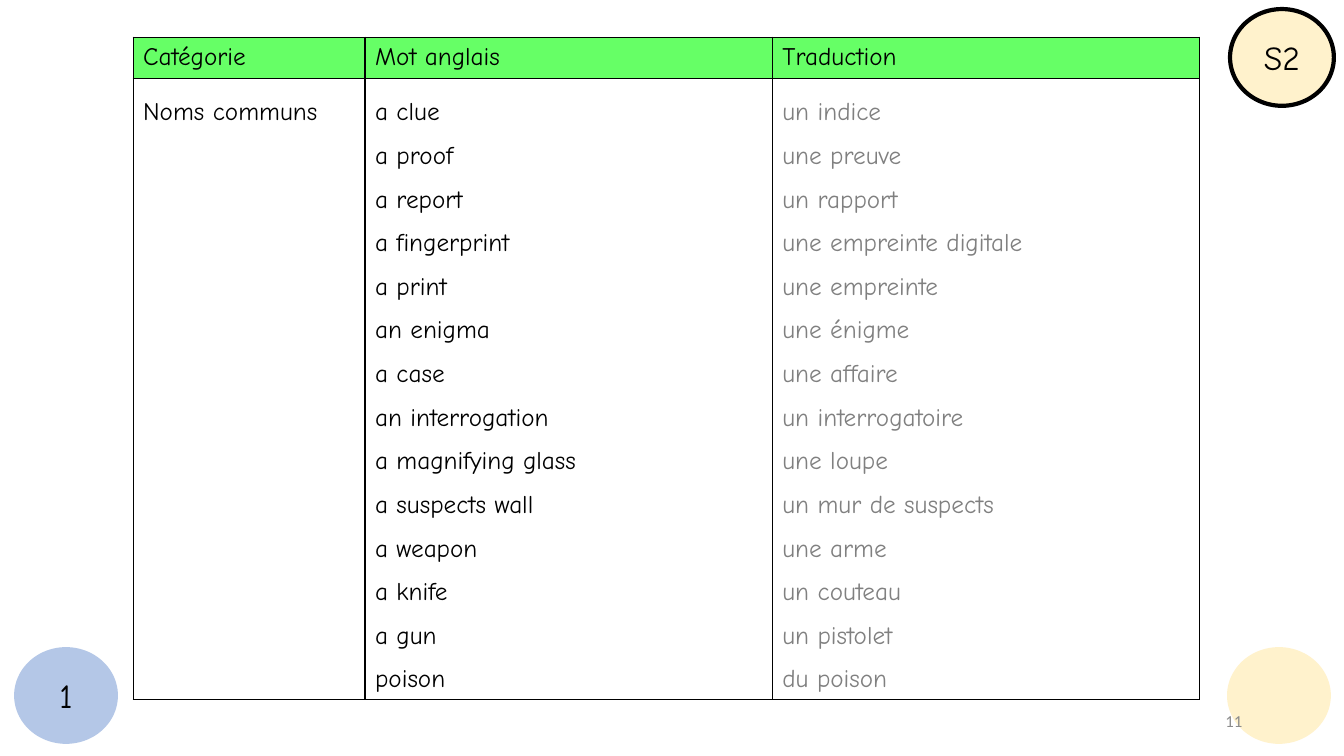
from lxml import etree
from pptx import Presentation
from pptx.dml.color import RGBColor
from pptx.enum.shapes import MSO_SHAPE
from pptx.enum.text import MSO_ANCHOR, PP_ALIGN
from pptx.oxml.ns import qn
from pptx.util import Inches, Pt

OVAL = MSO_SHAPE.OVAL
MIDDLE = MSO_ANCHOR.MIDDLE
CENTER, RIGHT = PP_ALIGN.CENTER, PP_ALIGN.RIGHT

BLACK = RGBColor(0x00, 0x00, 0x00)
GREEN = RGBColor(0x66, 0xFF, 0x66)
GREY = RGBColor(0x80, 0x80, 0x80)
NUMBER_GREY = RGBColor(0x8C, 0x8C, 0x8C)
CREAM = RGBColor(0xFF, 0xF2, 0xCC)
BLUE = RGBColor(0xB4, 0xC7, 0xE7)
FONT = "Comic Neue"

HEADERS = ["Catégorie", "Mot anglais", "Traduction"]
VOCABULARY = [
    ("a clue", "un indice"),
    ("a proof", "une preuve"),
    ("a report", "un rapport"),
    ("a fingerprint", "une empreinte digitale"),
    ("a print", "une empreinte"),
    ("an enigma", "une énigme"),
    ("a case", "une affaire"),
    ("an interrogation", "un interrogatoire"),
    ("a magnifying glass", "une loupe"),
    ("a suspects wall", "un mur de suspects"),
    ("a weapon", "une arme"),
    ("a knife", "un couteau"),
    ("a gun", "un pistolet"),
    ("poison", "du poison"),
]


def add_run(p, text, size, color, font=FONT):
    r = p.add_run()
    r.text = text
    r.font.size = Pt(size)
    r.font.name = font
    r.font.color.rgb = color


def add_borders(cell):
    """Draw a 1 pt black line on each side of the cell, ahead of its fill."""
    tcPr = cell._tc.get_or_add_tcPr()
    for i, side in enumerate(("lnL", "lnR", "lnT", "lnB")):
        ln = etree.Element(qn(f"a:{side}"), w=str(Pt(1)))
        fill = etree.SubElement(ln, qn("a:solidFill"))
        etree.SubElement(fill, qn("a:srgbClr"), val=str(BLACK))
        tcPr.insert(i, ln)


prs = Presentation()
prs.slide_width = Inches(13.33)
prs.slide_height = Inches(7.5)
s = prs.slides.add_slide(prs.slide_layouts[6])

# Vocabulary table
table = s.shapes.add_table(2, 3, Inches(1.32), Inches(0.37),
                           Inches(10.58), Inches(6.56)).table
for column, width in zip(table.columns, (2.3, 4.04, 4.24)):
    column.width = Inches(width)
for row, height in zip(table.rows, (0.41, 6.15)):
    row.height = Inches(height)

english, french = zip(*VOCABULARY)
body = [(["Noms communs"], BLACK), (english, BLACK), (french, GREY)]
for col, (header, (words, color)) in enumerate(zip(HEADERS, body)):
    head_cell, body_cell = table.cell(0, col), table.cell(1, col)
    head_cell.fill.solid()
    head_cell.fill.fore_color.rgb = GREEN
    body_cell.fill.background()
    add_run(head_cell.text_frame.paragraphs[0], header, 18, BLACK)
    tf = body_cell.text_frame
    for i, word in enumerate(words):
        p = tf.add_paragraph() if i else tf.paragraphs[0]
        p.line_spacing = 1.5
        add_run(p, word, 18, color)
    add_borders(head_cell)
    add_borders(body_cell)

# Corner circles: left, top, fill, outline width, label
CIRCLES = [
    (12.2, 0.09, CREAM, 3, "S2"),
    (12.17, 6.42, CREAM, 0, ""),
    (0.14, 6.42, BLUE, 0, "1"),
]
for left, top, color, outline, label in CIRCLES:
    sp = s.shapes.add_shape(OVAL, Inches(left), Inches(top),
                            Inches(1.03), Inches(0.96))
    sp.shadow.inherit = False
    sp.fill.solid()
    sp.fill.fore_color.rgb = color
    if outline:
        sp.line.color.rgb = BLACK
        sp.line.width = Pt(outline)
    else:
        sp.line.fill.background()
    if label:
        sp.text_frame.vertical_anchor = MIDDLE
        p = sp.text_frame.paragraphs[0]
        p.alignment = CENTER
        add_run(p, label, 24, BLACK)

# Slide number
tf = s.shapes.add_textbox(Inches(9.42), Inches(6.95),
                          Inches(3), Inches(0.4)).text_frame
tf.word_wrap = True
tf.vertical_anchor = MIDDLE
p = tf.paragraphs[0]
p.alignment = RIGHT
add_run(p, "11", 12, NUMBER_GREY, "Calibri")

prs.save("out.pptx")
